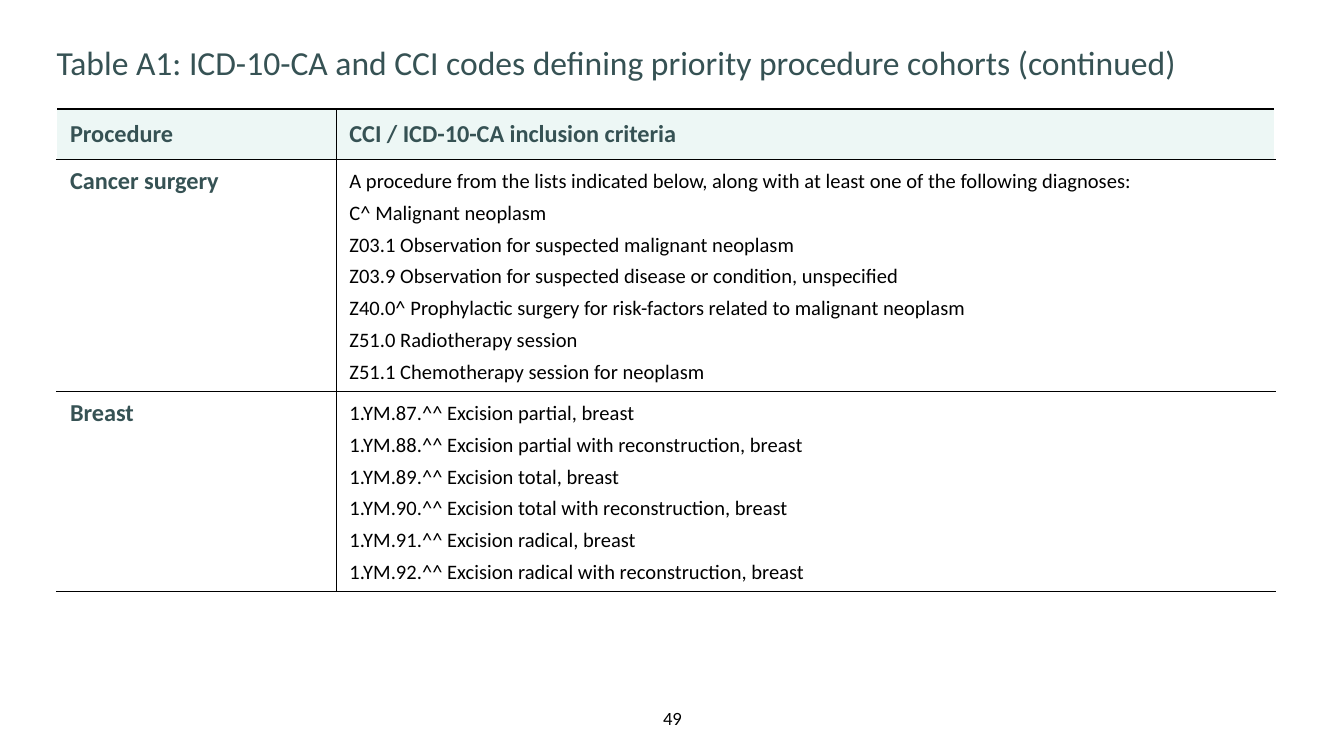
from lxml.etree import SubElement
from pptx import Presentation
from pptx.dml.color import RGBColor
from pptx.enum.text import MSO_ANCHOR as Anchor, PP_ALIGN as Align
from pptx.oxml.ns import qn
from pptx.util import Cm, Pt

FONT = "Calibri"
TEAL, MINT, BLACK, WHITE = "365254", "EDF7F5", "000000", "FFFFFF"
HEADER = ("Procedure", ["CCI / ICD-10-CA inclusion criteria"])
COHORTS = [
    ("Cancer surgery", [
        "A procedure from the lists indicated below, along with at least one of the following diagnoses:",
        "C^ Malignant neoplasm",
        "Z03.1 Observation for suspected malignant neoplasm",
        "Z03.9 Observation for suspected disease or condition, unspecified",
        "Z40.0^ Prophylactic surgery for risk-factors related to malignant neoplasm",
        "Z51.0 Radiotherapy session",
        "Z51.1 Chemotherapy session for neoplasm",
    ]),
    ("Breast", [
        "1.YM.87.^^ Excision partial, breast",
        "1.YM.88.^^ Excision partial with reconstruction, breast",
        "1.YM.89.^^ Excision total, breast",
        "1.YM.90.^^ Excision total with reconstruction, breast",
        "1.YM.91.^^ Excision radical, breast",
        "1.YM.92.^^ Excision radical with reconstruction, breast",
    ]),
]


def rgb(color):
    """Return the colour for a hex string."""
    return RGBColor.from_string(color)


def set_font(p, size, color, bold=False):
    """Format the font of a whole paragraph."""
    p.font.name, p.font.size, p.font.bold = FONT, Pt(size), bold
    p.font.color.rgb = rgb(color)


def clear_margins(tf):
    """Remove the inner margins of a text frame."""
    tf.margin_left = tf.margin_top = tf.margin_right = tf.margin_bottom = 0
    tf.word_wrap = True


def place(sp, box):
    """Move and size a shape to a box in centimetres."""
    sp.left, sp.top, sp.width, sp.height = (Cm(v) for v in box)


def add_border(cell, side, width):
    """Draw a black line on one side of a cell."""
    ln = SubElement(cell._tc.get_or_add_tcPr(), qn(f"a:ln{side}"), w=str(Pt(width)))
    SubElement(SubElement(ln, qn("a:solidFill")), qn("a:srgbClr"), val=BLACK)


def fill_cell(cell, lines, is_header, is_label):
    """Write the lines of a cell and set its borders and fill."""
    add_border(cell, "R" if is_label else "L", 0.5)
    add_border(cell, "T", 1 if is_header else 0.5)
    add_border(cell, "B", 0.5)
    cell.fill.solid()
    cell.fill.fore_color.rgb = rgb(MINT if is_header else WHITE)
    cell.vertical_anchor = Anchor.MIDDLE if is_header else Anchor.TOP
    tf = cell.text_frame
    tf.text = "\n".join(lines)
    for i, p in enumerate(tf.paragraphs):
        if is_header or is_label:
            set_font(p, 13, TEAL, bold=True)
        else:
            set_font(p, 11, BLACK)
            p.line_spacing = Pt(15)
            p.space_before = Pt(2 if i else 0)


def add_title(s, box, text):
    """Place and format the slide title."""
    sp = s.shapes.title
    place(sp, box)
    tf = sp.text_frame
    clear_margins(tf)
    tf.vertical_anchor = Anchor.TOP
    tf.text = text
    p = tf.paragraphs[0]
    p.alignment = Align.LEFT
    p.line_spacing = Pt(33)
    set_font(p, 18, TEAL)


def add_code_table(s, box, rows):
    """Add the table of procedures and their inclusion criteria."""
    table = s.shapes.add_table(len(rows), 2, *(Cm(v) for v in box)).table
    table.first_row = table.horz_banding = False
    label_width = 5.28
    table.columns[0].width = Cm(label_width)
    table.columns[1].width = Cm(box[2] - label_width)
    for i, (height, (label, criteria)) in enumerate(zip((0.95, 4.38, 3.78), rows)):
        table.rows[i].height = Cm(height)
        fill_cell(table.cell(i, 0), [label], i == 0, True)
        fill_cell(table.cell(i, 1), criteria, i == 0, False)


def add_page_number(s, box, number):
    """Add the centred page number."""
    tf = s.shapes.add_textbox(*(Cm(v) for v in box)).text_frame
    clear_margins(tf)
    tf.vertical_anchor = Anchor.MIDDLE
    p = tf.paragraphs[0]
    p.text = str(number)
    p.alignment = Align.CENTER
    set_font(p, 10, BLACK)


def main():
    """Build the slide and save it."""
    prs = Presentation()
    prs.slide_width, prs.slide_height = Cm(25.4), Cm(14.28)
    s = prs.slides.add_slide(prs.slide_layouts[5])
    add_title(s, (1.07, 0.38, 22.86, 1.12),
              "Table A1: ICD-10-CA and CCI codes defining priority procedure cohorts (continued)")
    add_code_table(s, (1.07, 2.06, 23.03, 9.11), [HEADER, *COHORTS])
    add_page_number(s, (11.91, 13.34, 1.6, 0.43), 49)
    prs.save("out.pptx")


if __name__ == "__main__":
    main()
